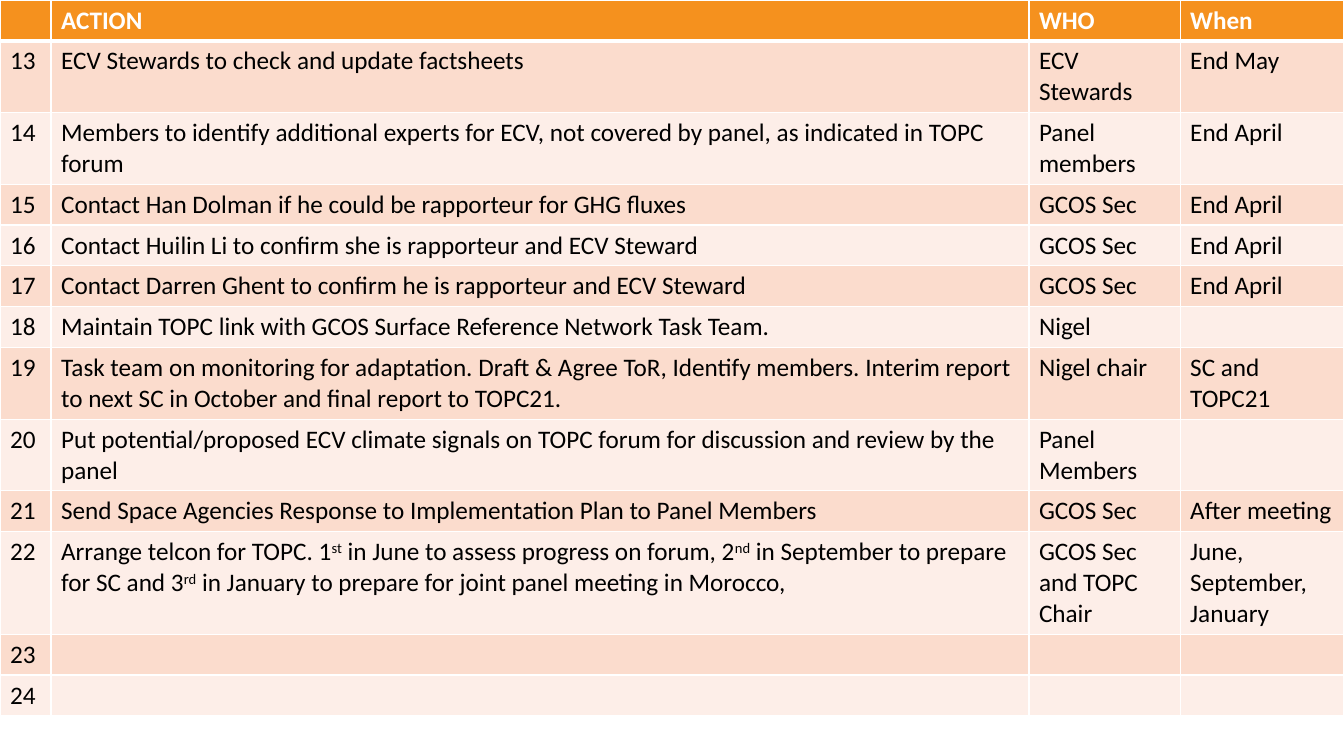
from lxml import etree
from pptx import Presentation
from pptx.dml.color import RGBColor
from pptx.oxml import ns
from pptx.util import Pt

COLORS = {
    "header": "F5911E",
    "odd": "FBDCCD",
    "even": "FDEEE8",
    "line": "FFFFFF",
    "header_text": "FFFFFF",
    "text": "000000",
}
FONT = "Calibri"
COLUMN_WIDTHS = [36.5, 698.5, 108, 117]
ROW_HEIGHT = 29.2
FIRST_NUMBER = 13

HEADER = ["", "ACTION", "WHO", "When"]
# Text between carets is superscript
ACTIONS = [
    ("ECV Stewards to check and update factsheets", "ECV Stewards", "End May"),
    ("Members to identify additional experts for ECV, not covered by panel, "
     "as indicated in TOPC forum", "Panel members", "End April"),
    ("Contact Han Dolman if he could be rapporteur for GHG fluxes", "GCOS Sec", "End April"),
    ("Contact Huilin Li to confirm she is rapporteur and ECV Steward", "GCOS Sec", "End April"),
    ("Contact Darren Ghent to confirm he is rapporteur and ECV Steward", "GCOS Sec", "End April"),
    ("Maintain TOPC link with GCOS Surface Reference Network Task Team.", "Nigel", ""),
    ("Task team on monitoring for adaptation. Draft & Agree ToR, Identify members. "
     "Interim report to next SC in October and final report to TOPC21.",
     "Nigel chair", "SC and TOPC21"),
    ("Put potential/proposed ECV climate signals on TOPC forum for discussion "
     "and review by the panel", "Panel Members", ""),
    ("Send Space Agencies Response to Implementation Plan to Panel Members",
     "GCOS Sec", "After meeting"),
    ("Arrange telcon for TOPC. 1^st^ in June to assess progress on forum, 2^nd^ in September "
     "to prepare for SC and 3^rd^ in January to prepare for joint panel meeting in Morocco,",
     "GCOS Sec and TOPC Chair", "June, September, January"),
    ("", "", ""),
    ("", "", ""),
]


def color(name):
    return RGBColor.from_string(COLORS[name])


def add_border(cell, side, width):
    properties = cell._tc.get_or_add_tcPr()
    line = etree.SubElement(properties, ns.qn(f"a:ln{side}"), w=str(Pt(width)))
    fill = etree.SubElement(line, ns.qn("a:solidFill"))
    etree.SubElement(fill, ns.qn("a:srgbClr"), val=COLORS["line"])


def write_text(cell, content, text_color, bold):
    para = cell.text_frame.paragraphs[0]
    para.font.size = Pt(18)
    for index, part in enumerate(content.split("^")):
        if not part:
            continue
        span = para.add_run()
        span.text = part
        span.font.name = FONT
        span.font.size = Pt(18)
        span.font.bold = bold
        span.font.color.rgb = color(text_color)
        if index % 2:
            span._r.get_or_add_rPr().set("baseline", "30000")


def format_cell(cell, row):
    # Borders come before the fill; the rule below the header is heavier
    widths = {"L": 1, "R": 1, "T": 3 if row == 1 else 1, "B": 3 if row == 0 else 1}
    for side, width in widths.items():
        add_border(cell, side, width)
    cell.fill.solid()
    cell.fill.fore_color.rgb = color("header" if row == 0 else "odd" if row % 2 else "even")


def add_action_table(page, rows):
    frame = page.shapes.add_table(len(rows), len(COLUMN_WIDTHS), 0, 0,
                                  Pt(sum(COLUMN_WIDTHS)), Pt(ROW_HEIGHT * len(rows)))
    table = frame.table
    table.horz_banding = False
    for column, width in zip(table.columns, COLUMN_WIDTHS):
        column.width = Pt(width)
    for row, contents in enumerate(rows):
        table.rows[row].height = Pt(ROW_HEIGHT)
        for column, content in enumerate(contents):
            cell = table.cell(row, column)
            format_cell(cell, row)
            write_text(cell, content, "text" if row else "header_text", row == 0)


def main():
    deck = Presentation()
    deck.slide_width, deck.slide_height = Pt(960), Pt(540)
    page = deck.slides.add_slide(deck.slide_layouts[6])

    # Numbered actions under the header row
    numbered = [(str(number), *action) for number, action in enumerate(ACTIONS, FIRST_NUMBER)]
    add_action_table(page, [HEADER, *numbered])

    deck.save("out.pptx")


if __name__ == "__main__":
    main()
